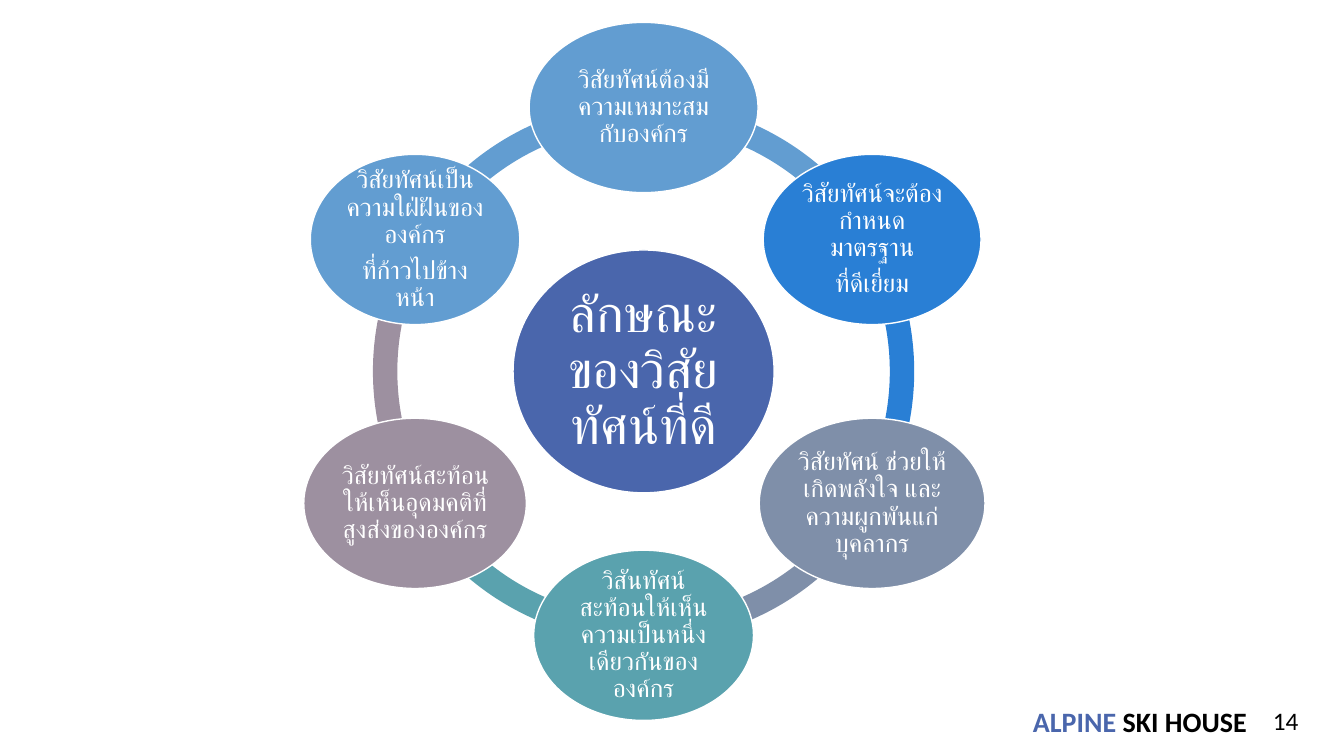
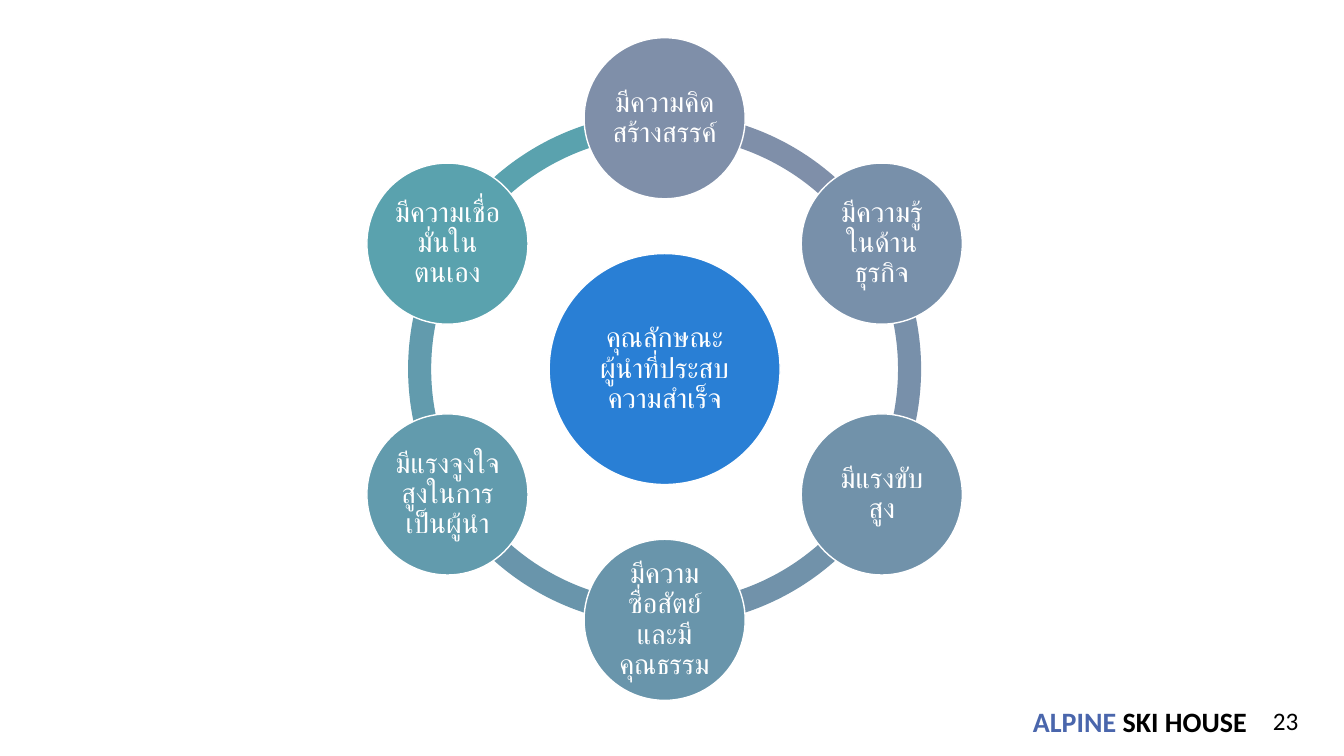
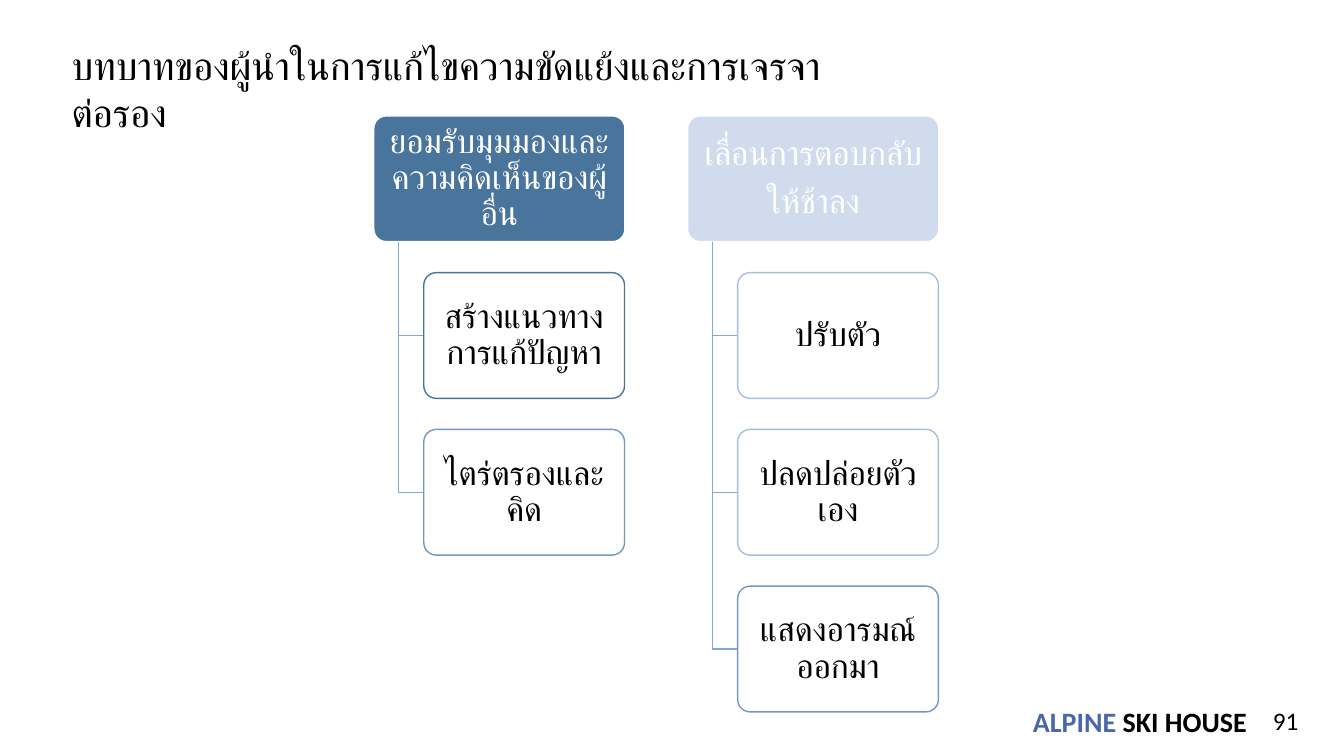
"""Build three slides: two radial cycles and one two-branch hierarchy."""
import math

from pptx import Presentation
from pptx.dml.color import RGBColor
from pptx.enum import shapes, text
from pptx.util import Cm, Pt

FONT = "Calibri"
WHITE = RGBColor(0xFF, 0xFF, 0xFF)
BLACK = RGBColor(0x00, 0x00, 0x00)
INDIGO = RGBColor(0x4A, 0x66, 0xAC)
SKY = RGBColor(0x62, 0x9D, 0xD1)
BLUE = RGBColor(0x29, 0x7F, 0xD5)
SLATE = RGBColor(0x7F, 0x8F, 0xA9)
SLATE_BLUE = RGBColor(0x78, 0x90, 0xAA)
STEEL = RGBColor(0x71, 0x92, 0xAA)
STEEL_TEAL = RGBColor(0x69, 0x95, 0xAB)
SOFT_TEAL = RGBColor(0x62, 0x9B, 0xAD)
TEAL = RGBColor(0x5A, 0xA2, 0xAE)
MAUVE = RGBColor(0x9D, 0x90, 0xA0)
NAVY = RGBColor(0x49, 0x74, 0x9B)
PALE = RGBColor(0xD0, 0xDC, 0xED)
MID_BLUE = RGBColor(0x71, 0x99, 0xC2)
LIGHT_BLUE = RGBColor(0xA6, 0xBF, 0xDC)
ELBOW_BLUE = RGBColor(0x7F, 0xAA, 0xD6)

TITLE_ONLY, BLANK = 5, 6


def add_page(deck, layout, number):
    page = deck.slides.add_slide(deck.slide_layouts[layout])
    brand = page.shapes.add_textbox(Cm(25.98), Cm(17.68), Cm(5.54), Cm(0.97)).text_frame
    brand.word_wrap = False
    brand.vertical_anchor = text.MSO_ANCHOR.MIDDLE
    brand.margin_left = brand.margin_right = Cm(0.05)
    brand.margin_top = brand.margin_bottom = Cm(0.05)
    para = brand.paragraphs[0]
    para.font.name, para.font.size, para.font.bold = FONT, Pt(20), True
    for words, color in (("ALPINE", INDIGO), (" SKI HOUSE", BLACK)):
        span = para.add_run()
        span.text = words
        span.font.color.rgb = color
    counter = page.shapes.add_textbox(Cm(31.55), Cm(17.65), Cm(1.42), Cm(1.02)).text_frame
    counter.word_wrap = True
    para = counter.paragraphs[0]
    para.text = str(number)
    para.alignment = text.PP_ALIGN.RIGHT
    para.font.name, para.font.size, para.font.color.rgb = FONT, Pt(18), BLACK
    return page


def add_node(page, kind, frame, words, size, fill, line=WHITE, ink=WHITE, margins=(0.08, 0.08)):
    node = page.shapes.add_shape(kind, *[Cm(length) for length in frame])
    node.shadow.inherit = False
    node.fill.solid()
    node.fill.fore_color.rgb = fill
    node.line.color.rgb = line
    node.line.width = Pt(1)
    box = node.text_frame
    box.word_wrap = True
    box.vertical_anchor = text.MSO_ANCHOR.MIDDLE
    box.margin_left = box.margin_right = Cm(margins[0])
    box.margin_top = box.margin_bottom = Cm(margins[1])
    box.text = words
    for para in box.paragraphs:
        para.alignment = text.PP_ALIGN.CENTER
        para.line_spacing = 0.9
        para.space_after = Pt(size * 0.35)
        para.font.name, para.font.size, para.font.color.rgb = FONT, Pt(size), ink
    return node


deck = Presentation()
deck.slide_width, deck.slide_height = Cm(33.87), Cm(19.05)

cycles = [
    dict(
        number=14, center=(16.22, 9.36), radius=6.65, ring=13.64, node_height=4.29, size=18,
        core=("ลักษณะของวิสัยทัศน์ที่ดี", 6.58, 6.12, 37, INDIGO, 0.13),
        nodes=[
            ("วิสัยทัศน์ต้องมีความเหมาะสมกับองค์กร", 5.77, SKY),
            ("วิสัยทัศน์จะต้องกำหนดมาตรฐาน\nที่ดีเยี่ยม", 5.49, BLUE),
            ("วิสัยทัศน์ ช่วยให้เกิดพลังใจ และความผูกพันแก่บุคลากร", 5.69, SLATE),
            ("วิสันทัศน์สะท้อนให้เห็นความเป็นหนึ่งเดียวกันขององค์กร", 5.54, TEAL),
            ("วิสัยทัศน์สะท้อนให้เห็นอุดมคติที่สูงส่งขององค์กร", 5.61, MAUVE),
            ("วิสัยทัศน์เป็นความใฝ่ฝันขององค์กร\nที่ก้าวไปข้างหน้า", 5.28, SKY),
        ],
    ),
    dict(
        number=23, center=(16.75, 9.3), radius=6.32, ring=12.93, node_height=4.06, size=20,
        core=("คุณลักษณะผู้นำที่ประสบความสำเร็จ", 5.82, 5.82, 20, BLUE, 0.08),
        nodes=[
            ("มีความคิดสร้างสรรค์", 4.06, SLATE),
            ("มีความรู้ในด้านธุรกิจ", 4.06, SLATE_BLUE),
            ("มีแรงขับสูง", 4.06, STEEL),
            ("มีความซื่อสัตย์และมีคุณธรรม", 4.06, STEEL_TEAL),
            ("มีแรงจูงใจสูงในการเป็นผู้นำ", 4.06, SOFT_TEAL),
            ("มีความเชื่อมั่นในตนเอง", 4.06, TEAL),
        ],
    ),
]

for cycle in cycles:
    page = add_page(deck, BLANK, cycle["number"])
    center_x, center_y = cycle["center"]
    ring, height = cycle["ring"], cycle["node_height"]
    step = 360 // len(cycle["nodes"])
    for index, (words, width, color) in enumerate(cycle["nodes"]):
        start = (270 + step * index) % 360
        arc = page.shapes.add_shape(
            shapes.MSO_SHAPE.BLOCK_ARC,
            Cm(center_x - ring / 2), Cm(center_y - ring / 2), Cm(ring), Cm(ring))
        arc.adjustments[0] = start * 0.6
        arc.adjustments[1] = (start + step) % 360 * 0.6
        arc.adjustments[2] = 0.045
        arc.shadow.inherit = False
        arc.fill.solid()
        arc.fill.fore_color.rgb = color
        arc.line.fill.background()
    words, width, core_height, size, color, margin = cycle["core"]
    frame = (center_x - width / 2, center_y - core_height / 2, width, core_height)
    add_node(page, shapes.MSO_SHAPE.OVAL, frame, words, size, color, margins=(margin, margin))
    for index, (words, width, color) in enumerate(cycle["nodes"]):
        angle = math.radians(270 + step * index)
        node_x = center_x + cycle["radius"] * math.cos(angle)
        node_y = center_y + cycle["radius"] * math.sin(angle)
        frame = (node_x - width / 2, node_y - height / 2, width, height)
        add_node(page, shapes.MSO_SHAPE.OVAL, frame, words, cycle["size"], color)

page = add_page(deck, TITLE_ONLY, 91)
title = page.shapes.title
title.left, title.top, title.width, title.height = Cm(1.55), Cm(0.91), Cm(19.43), Cm(1.45)
title.text_frame.text = "บทบาทของผู้นำในการแก้ไขความขัดแย้งและการเจรจาต่อรอง"
title.text_frame.word_wrap = True
title.text_frame.auto_size = text.MSO_AUTO_SIZE.NONE
title.text_frame.vertical_anchor = text.MSO_ANCHOR.TOP
para = title.text_frame.paragraphs[0]
para.alignment = text.PP_ALIGN.LEFT
para.font.name, para.font.size, para.font.color.rgb = FONT, Pt(28), BLACK

branches = [
    ("ยอมรับมุมมองและความคิดเห็นของผู้อื่น", NAVY, [
        ("สร้างแนวทางการแก้ปัญหา", NAVY),
        ("ไตร่ตรองและคิด", MID_BLUE),
    ]),
    ("เลื่อนการตอบกลับ\nให้ช้าลง", PALE, [
        ("ปรับตัว", LIGHT_BLUE),
        ("ปลดปล่อยตัวเอง", LIGHT_BLUE),
        ("แสดงอารมณ์ออกมา", MID_BLUE),
    ]),
]
HEAD_TOP, HEAD_WIDTH, CARD_WIDTH, CARD_HEIGHT = 2.92, 6.33, 5.06, 3.17
ROW_STEP, BRANCH_STEP, INDENT = 3.95, 7.91, 1.26
CARD_MARGINS = (0.13, 0.08)

for column, (heading, head_color, cards) in enumerate(branches):
    left = 9.42 + column * BRANCH_STEP
    add_node(page, shapes.MSO_SHAPE.ROUNDED_RECTANGLE, (left, HEAD_TOP, HEAD_WIDTH, CARD_HEIGHT),
             heading, 24, head_color, margins=CARD_MARGINS).adjustments[0] = 0.1
    for row, (words, line) in enumerate(cards, start=1):
        top = HEAD_TOP + row * ROW_STEP
        middle = Cm(top + CARD_HEIGHT / 2)
        stem, card_left = Cm(left + INDENT / 2), Cm(left + INDENT)
        outline = page.shapes.build_freeform(stem, Cm(HEAD_TOP + CARD_HEIGHT))
        outline.add_line_segments([(stem, middle), (card_left, middle)], close=False)
        elbow = outline.convert_to_shape()
        elbow.shadow.inherit = False
        elbow.fill.background()
        elbow.line.color.rgb = ELBOW_BLUE
        elbow.line.width = Pt(1)
        add_node(page, shapes.MSO_SHAPE.ROUNDED_RECTANGLE,
                 (left + INDENT, top, CARD_WIDTH, CARD_HEIGHT), words, 24, WHITE,
                 line, BLACK, CARD_MARGINS).adjustments[0] = 0.1

deck.save("out.pptx")
